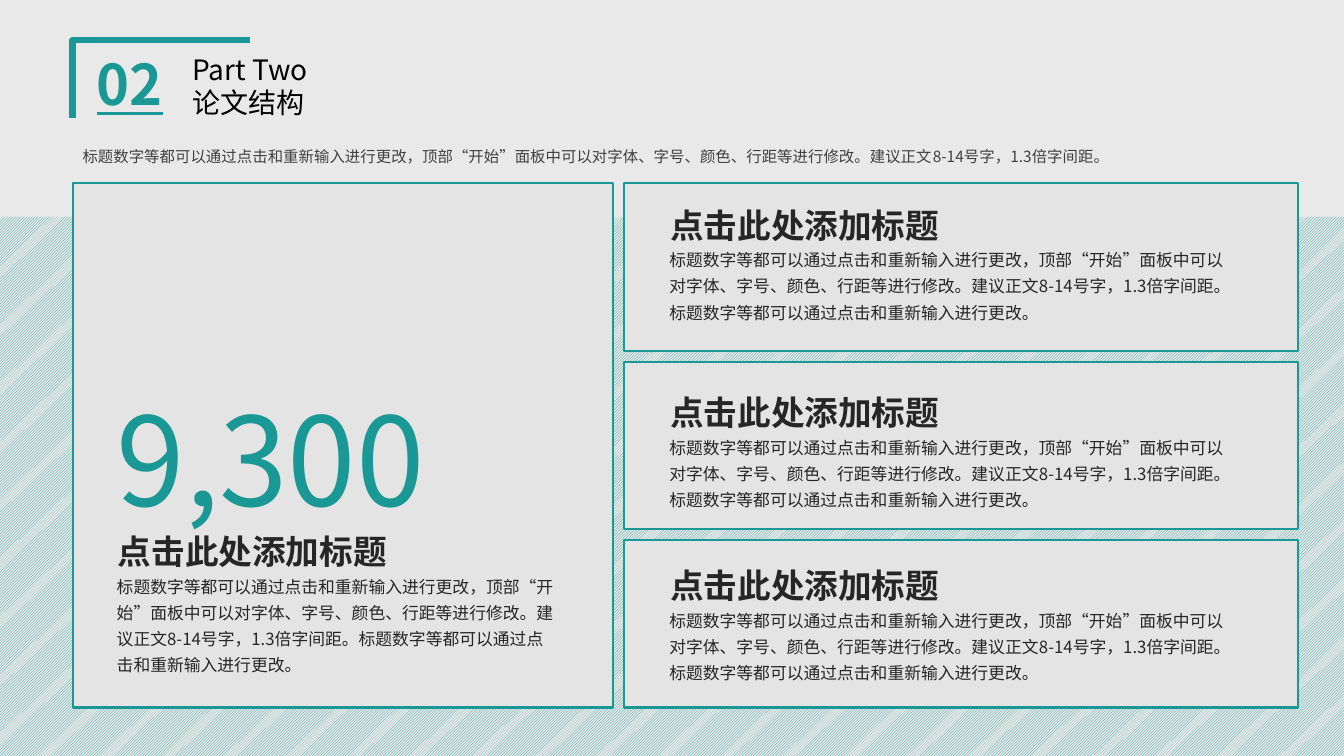
from lxml import etree
from pptx import Presentation
from pptx.dml.color import RGBColor
from pptx.enum.dml import MSO_PATTERN
from pptx.enum.shapes import MSO_SHAPE
from pptx.enum.text import MSO_AUTO_SIZE
from pptx.oxml.ns import qn
from pptx.util import Inches, Pt

RECTANGLE = MSO_SHAPE.RECTANGLE
STRIPES = MSO_PATTERN.LIGHT_UPWARD_DIAGONAL
GROW = MSO_AUTO_SIZE.SHAPE_TO_FIT_TEXT
FONT = "Noto Sans CJK SC"
COLORS = {
    "teal": "1A9895", "background": "E9E9E9", "card": "E4E4E4",
    "black": "000000", "heading": "262626", "intro": "404040",
}

SECTION_NUMBER = "02"
SECTION_TITLE = ["Part Two", "论文结构"]
INTRO = "标题数字等都可以通过点击和重新输入进行更改，顶部“开始”面板中可以对字体、字号、颜色、行距等进行修改。建议正文8-14号字，1.3倍字间距。"
BODY = INTRO + "标题数字等都可以通过点击和重新输入进行更改。"
BIG_NUMBER = "9,300"
HEADING = "点击此处添加标题"

LEFT, TOP = 0.72, 1.82
MAIN_WIDTH, MAIN_HEIGHT = 5.36, 5.2
SIDE_LEFT, SIDE_WIDTH, SIDE_HEIGHT = 6.19, 6.68, 1.66
SIDE_STEP = (MAIN_HEIGHT - SIDE_HEIGHT) / 2
SIDE_HEADING_TOPS = [1.98, 3.84, 5.56]
BODY_OFFSET = 0.39


def color(name):
    return RGBColor.from_string(COLORS[name])


def add_box(shapes, left, top, width, height):
    box = shapes.add_shape(RECTANGLE, Inches(left), Inches(top), Inches(width), Inches(height))
    box.shadow.inherit = False
    return box


def add_card(shapes, left, top, width, height):
    card = add_box(shapes, left, top, width, height)
    card.fill.solid()
    card.fill.fore_color.rgb = color("card")
    card.line.color.rgb = color("teal")
    card.line.width = Pt(1.5)


def add_text(shapes, position, lines, size, color_name, bold=False,
             underline=False, spacing=None, wrap=True):
    box = shapes.add_textbox(*[Inches(value) for value in position])
    frame = box.text_frame
    frame.word_wrap = wrap
    frame.auto_size = GROW
    for index, line in enumerate(lines):
        paragraph = frame.add_paragraph() if index else frame.paragraphs[0]
        if spacing:
            paragraph.line_spacing = spacing
        run = paragraph.add_run()
        run.text = line
        run.font.size = Pt(size)
        run.font.bold = bold
        run.font.underline = underline
        run.font.color.rgb = color(color_name)
        run.font.name = FONT
        east_asian = etree.SubElement(run._r.get_or_add_rPr(), qn("a:ea"))
        east_asian.set("typeface", FONT)


def add_heading_and_body(shapes, left, top, width, height):
    add_text(shapes, (left + 0.01, top, 2.89, 0.5), [HEADING], 24, "heading",
             bold=True, wrap=False)
    add_text(shapes, (left, top + BODY_OFFSET, width, height), [BODY], 12,
             "heading", spacing=1.3)


def add_backdrop(slide):
    slide.background.fill.solid()
    slide.background.fill.fore_color.rgb = color("background")
    builder = slide.shapes.build_freeform(Inches(LEFT), Inches(1.17))
    builder.add_line_segments(
        [(Inches(LEFT), Inches(0.4)), (Inches(2.48), Inches(0.4))], close=False)
    bracket = builder.convert_to_shape()
    bracket.shadow.inherit = False
    bracket.fill.background()
    bracket.line.color.rgb = color("teal")
    bracket.line.width = Pt(4.5)
    stripes = add_box(slide.shapes, 0, 2.15, 13.33, 5.35)
    stripes.fill.patterned()
    stripes.fill.pattern = STRIPES
    stripes.fill.fore_color.rgb = color("teal")
    stripes.fill.back_color.rgb = color("background")
    stripes.line.fill.background()


def main():
    presentation = Presentation()
    presentation.slide_width = Inches(13.33)
    presentation.slide_height = Inches(7.5)
    slide = presentation.slides.add_slide(presentation.slide_layouts[6])
    shapes = slide.shapes
    add_backdrop(slide)

    add_text(shapes, (0.86, 0.44, 0.95, 0.77), [SECTION_NUMBER], 40, "teal",
             bold=True, underline=True)
    add_text(shapes, (1.81, 0.47, 2.4, 0.77), SECTION_TITLE, 20, "black")
    add_text(shapes, (LEFT, 1.36, 12.15, 0.34), [INTRO], 11, "intro", spacing=1.3)

    add_card(shapes, LEFT, TOP, MAIN_WIDTH, MAIN_HEIGHT)
    for index, heading_top in enumerate(SIDE_HEADING_TOPS):
        add_card(shapes, SIDE_LEFT, TOP + index * SIDE_STEP, SIDE_WIDTH, SIDE_HEIGHT)
        add_heading_and_body(shapes, 6.54, heading_top, 5.83, 0.89)

    add_heading_and_body(shapes, 1.06, 5.22, 4.56, 1.15)
    add_text(shapes, (1.06, 3.75, 4.98, 1.58), [BIG_NUMBER], 88, "teal")
    presentation.save("out.pptx")


if __name__ == "__main__":
    main()
